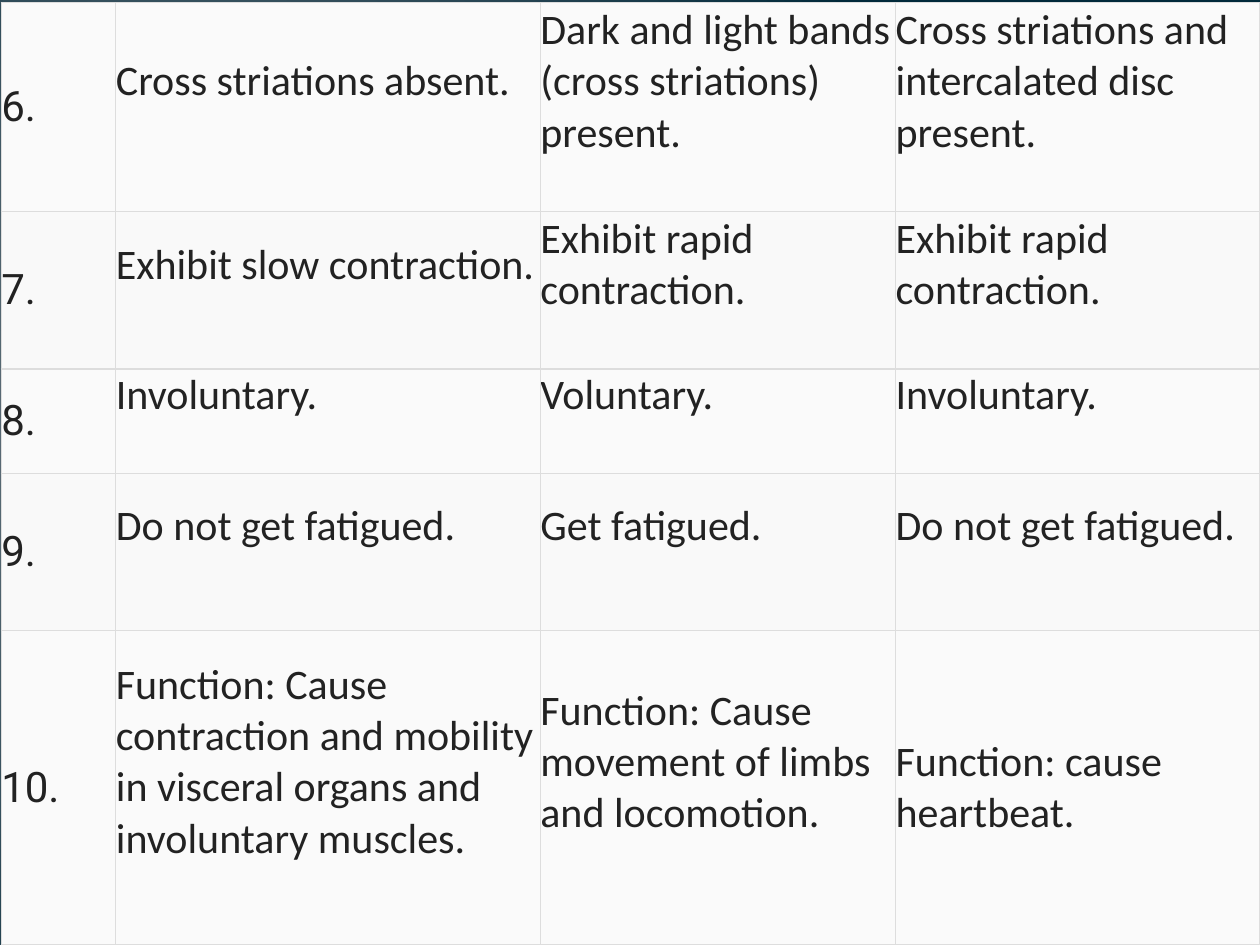
import pptx
import pptx.dml.color
import pptx.enum.text
import pptx.oxml
import pptx.oxml.ns
import pptx.util

ROWS = [
    ("6.", "Cross striations absent.", "Dark and light bands (cross striations) present.",
     "Cross striations and intercalated disc present."),
    ("7.", "Exhibit slow contraction.", "Exhibit rapid contraction.", "Exhibit rapid contraction."),
    ("8.", "Involuntary.", "Voluntary.", "Involuntary."),
    ("9.", "Do not get fatigued.", "Get fatigued.", "Do not get fatigued."),
    ("10.", "Function: Cause contraction and mobility in visceral organs and involuntary muscles.",
     "Function: Cause movement of limbs and locomotion.", "Function: cause heartbeat."),
]
COLUMN_WIDTHS = [65.5, 242.6, 203, 208.1]
ROW_HEIGHTS = [119.6, 89.8, 59.8, 89.8, 179.4]
ROW_FILLS = ["FAFAFA", "F9F9F9"]
BACKGROUND_STOPS = ["717C84", "01293A"]
TEXT_COLOR = "222222"
BORDER_COLOR = "DDDDDD"
BORDER_WIDTH = 0.75
TABLE_LEFT, TABLE_TOP = 0.75, 1.5
LINE_HEIGHT = 29.3
UNPADDED_CELL = (4, 3)

Pt = pptx.util.Pt
NAMESPACE = pptx.oxml.ns.nsdecls("a")


def color(value):
    return pptx.dml.color.RGBColor.from_string(value)


def set_background(slide):
    fill = slide.background.fill
    fill.gradient()
    for stop, value in zip(fill.gradient_stops, BACKGROUND_STOPS):
        stop.color.rgb = color(value)
    linear = slide.element.find(".//" + pptx.oxml.ns.qn("a:lin"))
    radial = pptx.oxml.parse_xml(
        f'<a:path {NAMESPACE} path="circle">'
        '<a:fillToRect l="15000" t="50000" r="85000" b="60000"/></a:path>')
    linear.getparent().replace(linear, radial)


def add_borders(cell):
    properties = cell._tc.get_or_add_tcPr()
    for side in ("lnL", "lnR", "lnT", "lnB"):
        properties.append(pptx.oxml.parse_xml(
            f'<a:{side} {NAMESPACE} w="{Pt(BORDER_WIDTH)}"><a:solidFill>'
            f'<a:srgbClr val="{BORDER_COLOR}"/></a:solidFill></a:{side}>'))


def fill_cell(cell, text, font_name, background, bottom):
    add_borders(cell)
    cell.fill.solid()
    cell.fill.fore_color.rgb = color(background)
    cell.margin_left = cell.margin_right = cell.margin_top = 0
    cell.margin_bottom = Pt(bottom)
    cell.vertical_anchor = pptx.enum.text.MSO_ANCHOR.MIDDLE
    cell.text = text
    font = cell.text_frame.paragraphs[0].font
    font.name = font_name
    font.size = Pt(24)
    font.bold = False
    font.color.rgb = color(TEXT_COLOR)


def add_comparison_table(slide):
    table = slide.shapes.add_table(
        len(ROWS), len(COLUMN_WIDTHS), Pt(TABLE_LEFT), Pt(TABLE_TOP),
        Pt(sum(COLUMN_WIDTHS)), Pt(sum(ROW_HEIGHTS))).table
    table.first_row = False
    table.horz_banding = False
    for column, width in zip(table.columns, COLUMN_WIDTHS):
        column.width = Pt(width)
    for row, height in zip(table.rows, ROW_HEIGHTS):
        row.height = Pt(height)
    for row_index, texts in enumerate(ROWS):
        background = ROW_FILLS[row_index % len(ROW_FILLS)]
        for column_index, text in enumerate(texts):
            is_number = column_index == 0
            padded = not is_number and (row_index, column_index) != UNPADDED_CELL
            fill_cell(table.cell(row_index, column_index), text,
                      "Roboto" if is_number else "Calibri", background,
                      LINE_HEIGHT if padded else 0)


def main():
    presentation = pptx.Presentation()
    presentation.slide_width = Pt(720)
    presentation.slide_height = Pt(540)
    slide = presentation.slides.add_slide(presentation.slide_layouts[6])
    set_background(slide)
    add_comparison_table(slide)
    presentation.save("out.pptx")


if __name__ == "__main__":
    main()
